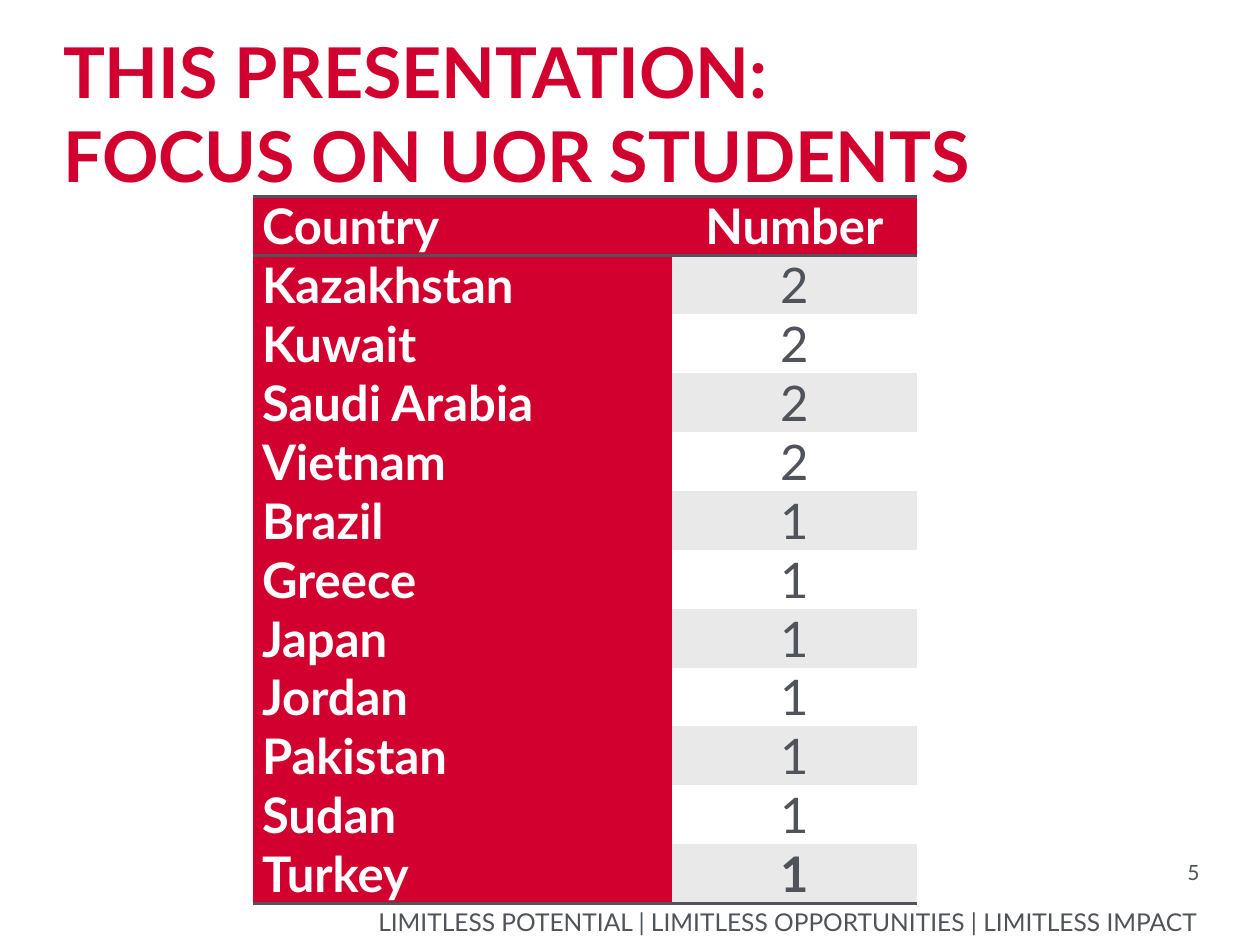
from lxml import etree
from pptx import Presentation
from pptx.dml.color import RGBColor
from pptx.enum.text import MSO_ANCHOR, PP_ALIGN
from pptx.oxml.ns import qn
from pptx.util import Inches, Pt

LEFT, CENTER, RIGHT = PP_ALIGN.LEFT, PP_ALIGN.CENTER, PP_ALIGN.RIGHT
TOP, BOTTOM = MSO_ANCHOR.TOP, MSO_ANCHOR.BOTTOM
COLORS = {"red": "D2002E", "gray": "50535A", "band": "E9E9EA", "white": "FFFFFF"}
PLAIN_TABLE = "{2D5ABB26-0587-4C30-8999-92F81FD0307C}"
GRID_COLUMNS, GRID_ROWS = 100, 75
TITLE_ONLY = 5

COUNTRIES = [
    ("Country", "Number"),
    ("Kazakhstan", "2"),
    ("Kuwait", "2"),
    ("Saudi Arabia", "2"),
    ("Vietnam", "2"),
    ("Brazil", "1"),
    ("Greece", "1"),
    ("Japan", "1"),
    ("Jordan", "1"),
    ("Pakistan", "1"),
    ("Sudan", "1"),
    ("Turkey", "1"),
]


class Page:
    """Style and current slide; lengths are grid columns and rows."""

    font_name = "Lato"

    def __init__(self, deck):
        self.column = deck.slide_width / GRID_COLUMNS
        self.row = deck.slide_height / GRID_ROWS
        self.slide = deck.slides.add_slide(deck.slide_layouts[TITLE_ONLY])

    def area(self, left, top, width, height):
        return (int(left * self.column), int(top * self.row),
                int(width * self.column), int(height * self.row))

    def set_text(self, frame, text, size, color, bold=False, align=LEFT):
        frame.text = text
        for para in frame.paragraphs:
            para.alignment = align
            for span in para.runs:
                span.font.name = self.font_name
                span.font.size = Pt(size)
                span.font.bold = bold
                span.font.color.rgb = RGBColor.from_string(COLORS[color])

    def set_frame(self, frame, anchor, wrap):
        frame.margin_left = frame.margin_right = 0
        frame.margin_top = frame.margin_bottom = 0
        frame.vertical_anchor = anchor
        frame.word_wrap = wrap

    def title(self, text, area):
        title = self.slide.shapes.title
        title.left, title.top, title.width, title.height = self.area(*area)
        self.set_frame(title.text_frame, BOTTOM, False)
        self.set_text(title.text_frame, text, 40, "red", bold=True)

    def note(self, text, area, size, anchor):
        box = self.slide.shapes.add_textbox(*self.area(*area))
        self.set_frame(box.text_frame, anchor, True)
        self.set_text(box.text_frame, text, size, "gray", align=RIGHT)

    def rule(self, cell, *sides):
        """Draw cell borders; sides are lnT and lnB, in that order."""
        properties = cell._tc.get_or_add_tcPr()
        for index, side in enumerate(sides):
            line = etree.Element(qn(f"a:{side}"), w=str(Pt(2)))
            fill = etree.SubElement(line, qn("a:solidFill"))
            etree.SubElement(fill, qn("a:srgbClr"), val=COLORS["gray"])
            properties.insert(index, line)

    def table(self, records, area, widths):
        left, top, width, height = self.area(*area)
        table = self.slide.shapes.add_table(
            len(records), len(widths), left, top, width, height).table
        table._tbl.tblPr.find(qn("a:tableStyleId")).text = PLAIN_TABLE
        for column, share in zip(table.columns, widths):
            column.width = int(share * self.column)
        last = len(records) - 1
        for i, record in enumerate(records):
            table.rows[i].height = height // len(records)
            for j, text in enumerate(record):
                cell = table.cell(i, j)
                heading = i == 0 or j == 0
                cell.margin_left = cell.margin_right = Inches(0.07)
                cell.margin_top = cell.margin_bottom = 0
                cell.fill.solid()
                fill = "red" if heading else "band" if i % 2 else "white"
                cell.fill.fore_color.rgb = RGBColor.from_string(COLORS[fill])
                self.set_text(cell.text_frame, text, 28,
                              "white" if heading else "gray",
                              bold=heading or i == last,
                              align=CENTER if j else LEFT)
                if i == 0:
                    self.rule(cell, "lnT", "lnB")
                elif i == last:
                    self.rule(cell, "lnB")


def main():
    deck = Presentation()
    deck.slide_width, deck.slide_height = Inches(10), Inches(7.5)
    page = Page(deck)
    page.note("LIMITLESS POTENTIAL | LIMITLESS OPPORTUNITIES | LIMITLESS IMPACT",
              (21.1, 71.9, 74, 2.4), 14, BOTTOM)
    page.title("THIS PRESENTATION: \vFOCUS ON UOR STUDENTS", (5, 6.5, 90.6, 9.1))
    page.note("5", (87.8, 68.2, 7.4, 2.8), 12, TOP)
    page.table(COUNTRIES, (20.1, 15.6, 52.7, 56), (33.2, 19.5))
    deck.save("out.pptx")


if __name__ == "__main__":
    main()
